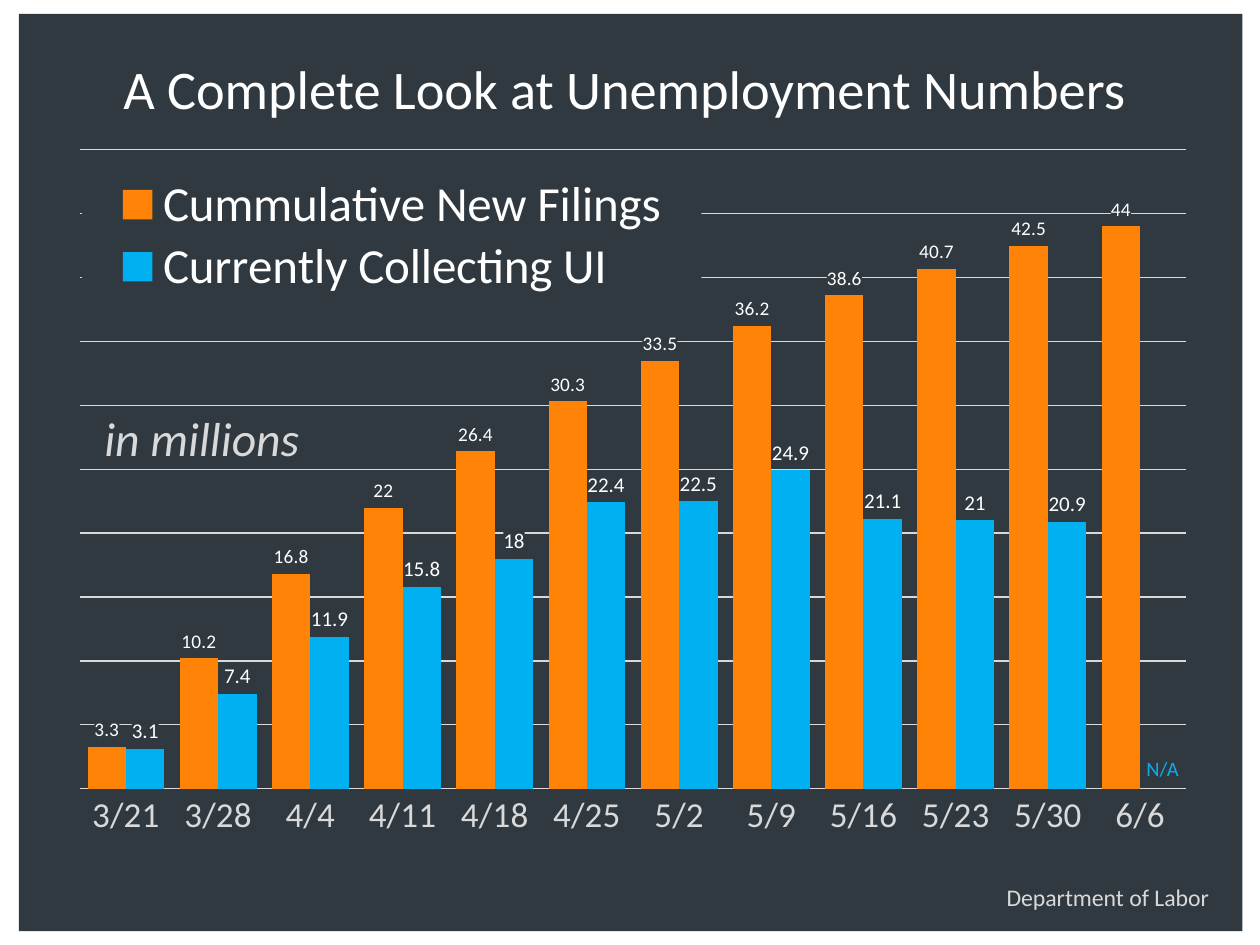
from lxml import etree
from pptx import Presentation
from pptx import util as u
from pptx.chart.data import CategoryChartData
from pptx.dml.color import RGBColor
from pptx.enum import chart as ch, shapes, text
from pptx.oxml import parse_xml
from pptx.oxml.ns import nsdecls, qn

FONT = "Calibri"
DARK, WHITE, GREY = "2F393F", "FFFFFF", "D9D9D9"
DATES = ["3/21", "3/28", "4/4", "4/11", "4/18", "4/25",
         "5/2", "5/9", "5/16", "5/23", "5/30", "6/6"]
# name, values, bar colour, label size
SERIES = [
    ("Cummulative New Filings",
     [3.3, 10.2, 16.8, 22, 26.4, 30.3, 33.5, 36.2, 38.6, 40.7, 42.5, 44], "FF8306", 11),
    ("Currently Collecting UI",
     [3.1, 7.4, 11.9, 15.8, 18, 22.4, 22.5, 24.9, 21.1, 21, 20.9, None], "00B0F0", 12),
]


def rgb(hex_color):
    return RGBColor.from_string(hex_color)


def paint(fill, color):
    fill.solid()
    fill.fore_color.rgb = rgb(color)


def style_font(font, size, color, italic=False):
    formats = {"name": FONT, "size": u.Pt(size), "bold": False, "italic": italic}
    for attribute, value in formats.items():
        setattr(font, attribute, value)
    font.color.rgb = rgb(color)


def inches(box):
    return [u.Inches(length) for length in box]


def write(frame, words, size, color, italic=False, wrap=False, align=text.PP_ALIGN.LEFT):
    formats = {"word_wrap": wrap, "auto_size": text.MSO_AUTO_SIZE.SHAPE_TO_FIT_TEXT,
               "vertical_anchor": text.MSO_ANCHOR.TOP}
    for attribute, value in formats.items():
        setattr(frame, attribute, value)
    paragraph = frame.paragraphs[0]
    paragraph.alignment = align
    run = paragraph.add_run()
    run.text = words
    style_font(run.font, size, color, italic)


def chart_layout(x, y, w, h, inner=False):
    """Manual position as fractions of the chart area."""
    layout = etree.Element(qn("c:layout"))
    manual = etree.SubElement(layout, qn("c:manualLayout"))
    settings = [("layoutTarget", "inner")] if inner else []
    settings += [("xMode", "edge"), ("yMode", "edge"), ("x", x), ("y", y), ("w", w), ("h", h)]
    for tag, value in settings:
        etree.SubElement(manual, qn("c:" + tag)).set("val", str(value))
    return layout


def add_backing(element, color):
    """Fill behind a legend or data labels, hiding the gridlines."""
    element.find(qn("c:txPr")).addprevious(parse_xml(
        f'<c:spPr {nsdecls("c", "a")}><a:solidFill><a:srgbClr val="{color}"/>'
        '</a:solidFill><a:ln><a:noFill/></a:ln></c:spPr>'))


def add_panel(slide, box):
    panel = slide.shapes.add_shape(shapes.MSO_SHAPE.RECTANGLE, *inches(box))
    panel.shadow.inherit = False
    paint(panel.fill, DARK)
    panel.line.fill.background()
    # Keep the panel behind the title
    slide.shapes._spTree.insert(2, panel._element)


def add_title(slide, box):
    title = slide.shapes.title
    title.left, title.top, title.width, title.height = inches(box)
    write(title.text_frame, "A Complete Look at Unemployment Numbers ", 31.1, WHITE,
          wrap=True, align=text.PP_ALIGN.CENTER)


def add_note(slide, box, *words_and_style):
    note = slide.shapes.add_textbox(*inches(box))
    write(note.text_frame, *words_and_style)


def format_axes(chart):
    dates = chart.category_axis
    dates.major_tick_mark = ch.XL_TICK_MARK.NONE
    style_font(dates.tick_labels.font, 20, GREY)
    millions = chart.value_axis
    formats = {"minimum_scale": 0, "maximum_scale": 50, "major_unit": 5,
               "has_major_gridlines": True, "visible": False}
    for attribute, value in formats.items():
        setattr(millions, attribute, value)
    for line in (dates.format.line, millions.major_gridlines.format.line):
        line.width = u.Pt(0.75)
        line.color.rgb = rgb(GREY)


def format_legend(chart):
    chart.has_legend = True
    legend = chart.legend
    legend.position = ch.XL_LEGEND_POSITION.BOTTOM
    legend.include_in_layout = False
    style_font(legend.font, 28, WHITE)
    element = legend._element
    element.find(qn("c:legendPos")).addnext(chart_layout(0.02, 0.06, 0.54, 0.17))
    add_backing(element, DARK)


def format_series(series, color, label_size):
    paint(series.format.fill, color)
    series.invert_if_negative = False
    labels = series.data_labels
    labels.show_value = True
    labels.position = ch.XL_LABEL_POSITION.OUTSIDE_END
    style_font(labels.font, label_size, WHITE)
    add_backing(labels._element, DARK)


def add_filings_chart(slide, box):
    data = CategoryChartData()
    data.categories = DATES
    for name, values, _, _ in SERIES:
        data.add_series(name, values)
    chart = slide.shapes.add_chart(
        ch.XL_CHART_TYPE.COLUMN_CLUSTERED, *inches(box), data).chart
    chart.has_title = False
    style_font(chart.font, 10, "000000")
    plot = chart.plots[0]
    plot.gap_width, plot.overlap, plot.vary_by_categories = 40, 0, False

    # Plot position
    area = chart._chartSpace.find(".//" + qn("c:plotArea"))
    for old_layout in area.findall(qn("c:layout")):
        area.remove(old_layout)
    area.insert(0, chart_layout(0.018, 0.03, 0.965, 0.854, inner=True))

    format_axes(chart)
    format_legend(chart)
    for series, (_, _, color, label_size) in zip(plot.series, SERIES):
        format_series(series, color, label_size)


def main():
    deck = Presentation()
    deck.slide_width, deck.slide_height = u.Inches(10), u.Inches(7.5)
    slide = deck.slides.add_slide(deck.slide_layouts[5])
    paint(slide.background.fill, WHITE)

    add_panel(slide, (0.15, 0.11, 9.71, 7.28))
    add_title(slide, (0.15, 0.39, 9.71, 0.62))
    add_filings_chart(slide, (0.47, 1.01, 9.1, 5.94))

    # Source, unit and missing value
    add_note(slide, (7.89, 6.96, 1.83, 0.33), "Department of Labor", 13.6, GREY)
    add_note(slide, (0.73, 3.2, 1.77, 0.56), "in millions", 27.2, GREY, True)
    add_note(slide, (9, 5.95, 0.46, 0.3), "N/A", 11.7, "0CADEF")
    deck.save("out.pptx")


if __name__ == "__main__":
    main()
